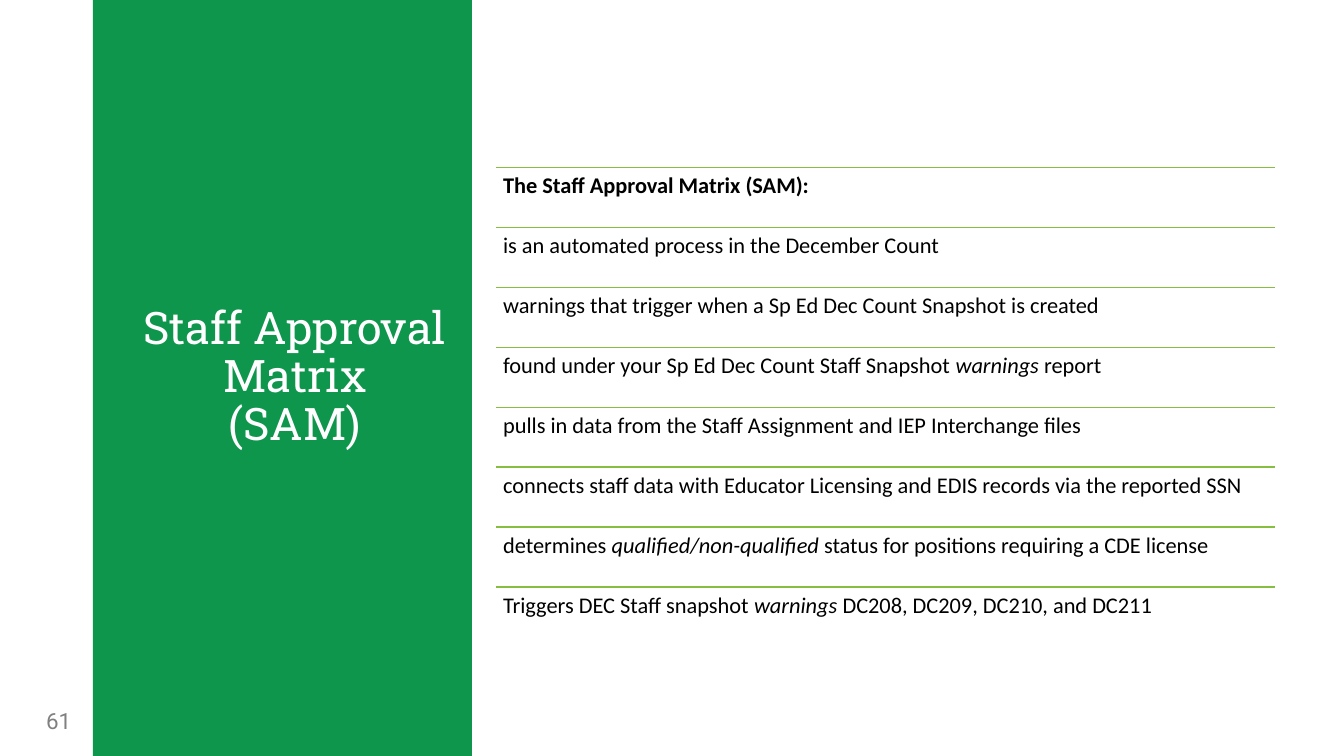
from lxml import etree
from pptx import Presentation
from pptx.dml.color import RGBColor
from pptx.enum import shapes, text
from pptx.oxml import ns
from pptx.util import Inches, Pt

PANEL_GREEN, RULE_GREEN = "0D964C", "86BE40"
WHITE, BLACK, GREY = "FFFFFF", "000000", "808080"
LIST_LEFT, LIST_TOP, LIST_WIDTH, LIST_HEIGHT = 4.92, 1.66, 7.73, 4.76

# Each row is a list of (words, font format) pieces
ITALIC = {"italic": True}
ROWS = [
    [("The Staff Approval Matrix (SAM):", {"bold": True})],
    [("is an automated process in the December Count", {})],
    [("warnings that trigger when a Sp Ed Dec Count Snapshot is created", {})],
    [("found under your Sp Ed Dec Count Staff Snapshot ", {}), ("warnings", ITALIC), (" report", {})],
    [("pulls in data from the Staff Assignment and IEP Interchange files", {})],
    [("connects staff data with Educator Licensing and EDIS records via the reported SSN", {})],
    [("determines ", {}), ("qualified/non-qualified", ITALIC),
     (" status for positions requiring a CDE license", {})],
    [("Triggers DEC Staff snapshot ", {}), ("warnings", ITALIC),
     (" DC208, DC209, DC210, and DC211", {})],
]


def rgb(hex_colour):
    return RGBColor.from_string(hex_colour)


def style(font, face, size, colour, **formats):
    font.color.rgb = rgb(colour)
    for name, value in {"name": face, "size": Pt(size), **formats}.items():
        setattr(font, name, value)


prs = Presentation()
prs.slide_width, prs.slide_height = Inches(13.33), Inches(7.5)
slide = prs.slides.add_slide(prs.slide_layouts[5])

# Title panel
title = slide.shapes.title
title.left, title.top = Inches(0.92), Inches(0)
title.width, title.height = Inches(3.76), Inches(7.5)
title.fill.solid()
title.fill.fore_color.rgb = rgb(PANEL_GREEN)
title_frame = title.text_frame
title_frame.text = "Staff Approval Matrix\v(SAM)"
for name, value in {"margin_left": 0, "margin_right": 0, "margin_top": 0, "margin_bottom": 0,
                    "word_wrap": True, "auto_size": text.MSO_AUTO_SIZE.NONE,
                    "vertical_anchor": text.MSO_ANCHOR.MIDDLE}.items():
    setattr(title_frame, name, value)
heading = title_frame.paragraphs[0]
heading.alignment = text.PP_ALIGN.CENTER
heading.line_spacing = 0.9
heading_format = heading._p.get_or_add_pPr()
heading_format.set("marL", str(Inches(0.25)))
heading_format.set("indent", "0")
for run in heading.runs:
    style(run.font, "Roboto Slab", 32, WHITE)

# Page number
page_box = slide.shapes.add_textbox(Inches(0.36), Inches(6.95), Inches(3), Inches(0.4))
page_box.text_frame.word_wrap = True
page_box.text_frame.vertical_anchor = text.MSO_ANCHOR.MIDDLE
page_number = page_box.text_frame.paragraphs[0]
page_number.space_after = Pt(6)
page_run = page_number.add_run()
page_run.text = "61"
style(page_run.font, "Roboto", 16, GREY)

# Ruled list
ruled_list = slide.shapes.add_group_shape().shapes
row_height = LIST_HEIGHT / len(ROWS)
left, width = Inches(LIST_LEFT), Inches(LIST_WIDTH)
for index, pieces in enumerate(ROWS):
    top = Inches(LIST_TOP + index * row_height)
    rule = ruled_list.add_connector(shapes.MSO_CONNECTOR.STRAIGHT, left, top, left + width, top)
    rule.line.color.rgb = rgb(RULE_GREEN)
    rule.line.width = Pt(1)
    etree.SubElement(rule._element.spPr, ns.qn("a:effectLst"))

    row_frame = ruled_list.add_textbox(left, top, width, Inches(row_height)).text_frame
    row_frame.word_wrap = True
    for side in ("left", "right", "top", "bottom"):
        setattr(row_frame, f"margin_{side}", Inches(0.07))
    statement = row_frame.paragraphs[0]
    statement.line_spacing = 0.9
    for words, formats in pieces:
        run = statement.add_run()
        run.text = words
        style(run.font, "Calibri", 16, BLACK, **formats)

prs.save("out.pptx")
